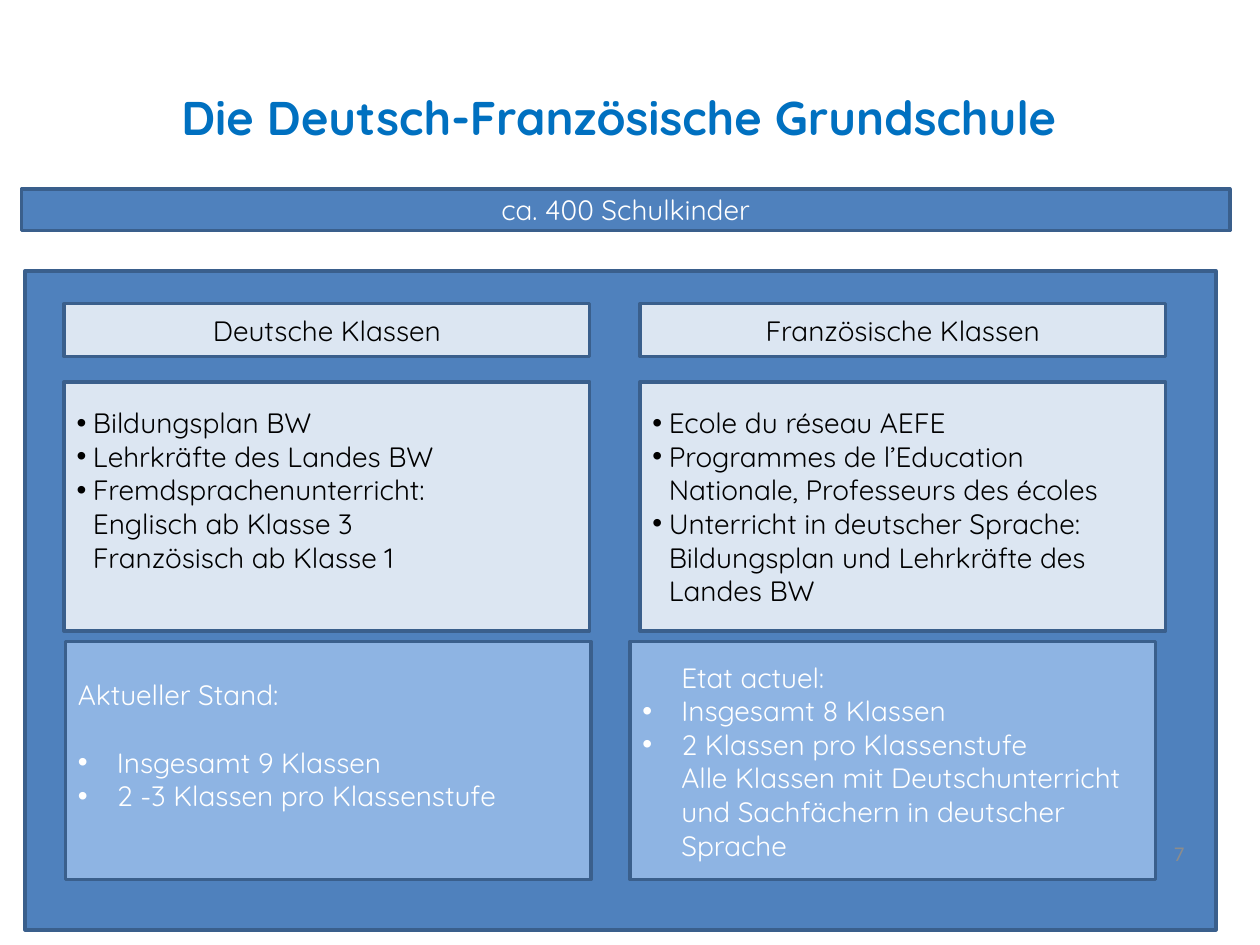
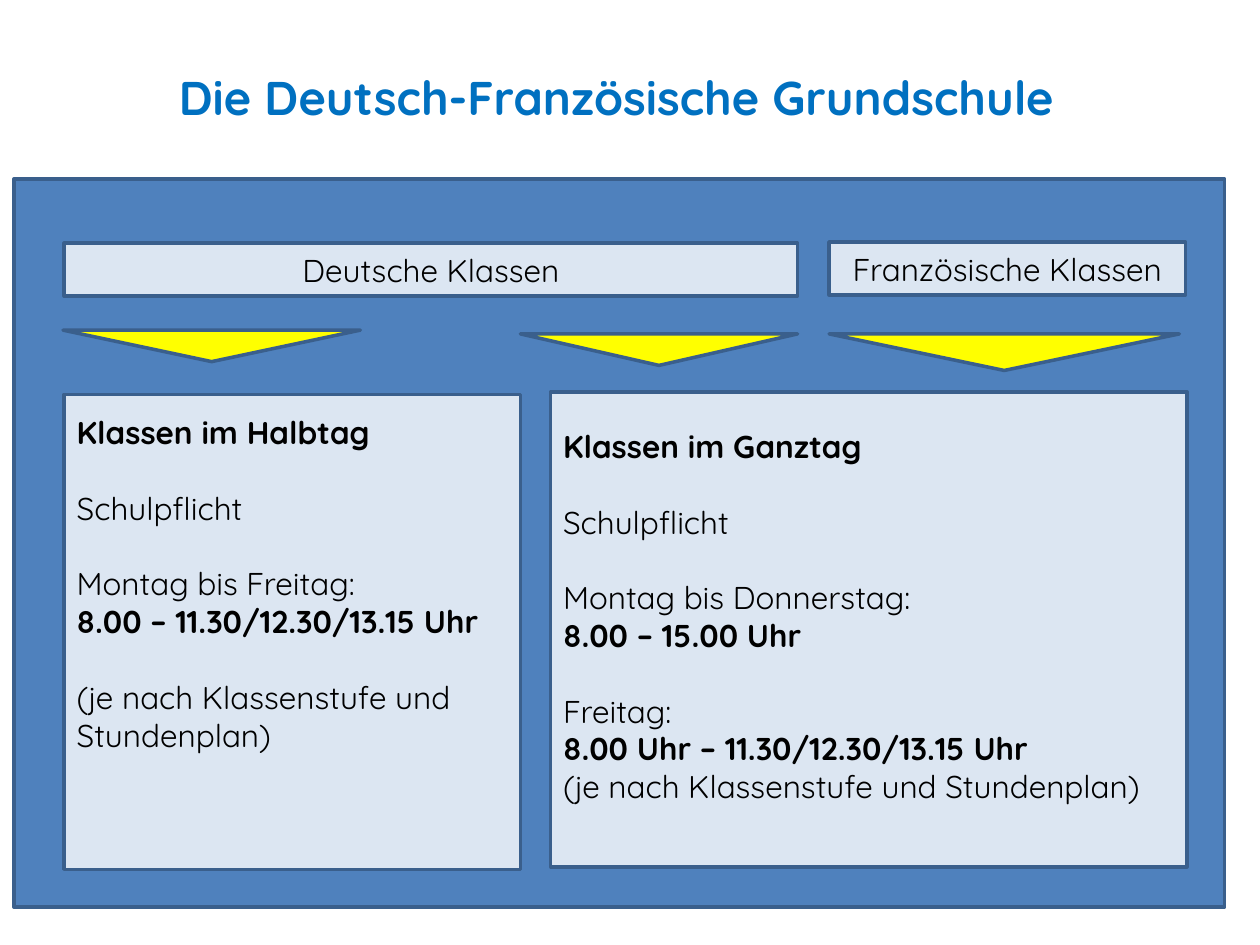
import dataclasses
import typing

import lxml.etree
import pptx
import pptx.dml.color
import pptx.enum.shapes
import pptx.enum.text
import pptx.oxml.ns
import pptx.util

RGBColor = pptx.dml.color.RGBColor
Preset = pptx.enum.shapes.MSO_SHAPE
Align = pptx.enum.text.PP_ALIGN
Anchor = pptx.enum.text.MSO_ANCHOR

# Shared colours, fonts and grid
BLUE = RGBColor(0x4F, 0x81, 0xBD)
MID_BLUE = RGBColor(0x8E, 0xB4, 0xE3)
PALE_BLUE = RGBColor(0xDC, 0xE6, 0xF2)
OUTLINE = RGBColor(0x3A, 0x5F, 0x8C)
TITLE_BLUE = RGBColor(0x00, 0x70, 0xC0)
YELLOW = RGBColor(0xFF, 0xFF, 0x00)
GREY = RGBColor(0x8C, 0x8C, 0x8C)
BLACK = RGBColor(0, 0, 0)
WHITE = RGBColor(0xFF, 0xFF, 0xFF)

FONT = "Quicksand"
NUMBER_FONT = "Calibri"
TITLE = "Die Deutsch-Französische Grundschule"
GERMAN = "Deutsche Klassen"
FRENCH = "Französische Klassen"

WIDTH, HEIGHT = pptx.util.Inches(10), pptx.util.Inches(7.5)
COLUMNS, ROWS = 100, 75
LINE_HEIGHT = 1.2


@dataclasses.dataclass(frozen=True)
class Area:
    """A place on the grid, in columns and rows."""
    left: float
    top: float
    width: float
    height: float

    def emu(self) -> tuple[int, ...]:
        column, row = WIDTH / COLUMNS, HEIGHT / ROWS
        return (round(self.left * column), round(self.top * row),
                round(self.width * column), round(self.height * row))


@dataclasses.dataclass(frozen=True)
class Line:
    """One paragraph; gap counts the empty lines above it."""
    text: str
    bullet: bool = False
    indent: float = 0
    bold: bool = False
    gap: int = 0


@dataclasses.dataclass(frozen=True)
class Style:
    size: float
    color: RGBColor = BLACK
    align: Align = Align.LEFT
    font: str = FONT


@dataclasses.dataclass(frozen=True)
class Panel:
    """A filled box; inset is the top margin in rows, None centres the text."""
    area: Area
    fill: RGBColor = PALE_BLUE
    lines: tuple[Line, ...] = ()
    style: Style = Style(16)
    inset: typing.Optional[float] = None
    preset: Preset = Preset.RECTANGLE
    rotation: float = 0


def set_bullet(para, indent: float, bullet: bool) -> None:
    properties = para._p.get_or_add_pPr()
    margin = WIDTH * indent / COLUMNS
    properties.set("marL", str(round(margin)))
    properties.set("indent", str(round(-margin if bullet else 0)))
    if bullet:
        for tag, values in {"a:buFont": {"typeface": "Arial"},
                            "a:buChar": {"char": "•"}}.items():
            lxml.etree.SubElement(properties, pptx.oxml.ns.qn(tag), values)


def write(box, lines: typing.Sequence[Line], style: Style,
          inset: typing.Optional[float] = None) -> None:
    frame = box.text_frame
    frame.word_wrap = True
    frame.vertical_anchor = Anchor.MIDDLE if inset is None else Anchor.TOP
    if inset is not None:
        frame.margin_top = round(HEIGHT * inset / ROWS)
    for number, line in enumerate(lines):
        para = frame.add_paragraph() if number else frame.paragraphs[0]
        para.alignment = style.align
        para.space_before = pptx.util.Pt(line.gap * style.size * LINE_HEIGHT)
        set_bullet(para, line.indent, line.bullet)
        span = para.add_run()
        span.text = line.text
        formats = {"name": style.font, "size": pptx.util.Pt(style.size), "bold": line.bold}
        for name, value in formats.items():
            setattr(span.font, name, value)
        span.font.color.rgb = style.color


def draw_panel(page, panel: Panel) -> None:
    box = page.shapes.add_shape(panel.preset, *panel.area.emu())
    box.shadow.inherit = False
    box.rotation = panel.rotation
    box.fill.solid()
    box.fill.fore_color.rgb = panel.fill
    box.line.color.rgb = OUTLINE
    box.line.width = pptx.util.Pt(2)
    if panel.lines:
        write(box, panel.lines, panel.style, panel.inset)


def draw_label(page, area: Area, text: str, style: Style, bold: bool = False) -> None:
    write(page.shapes.add_textbox(*area.emu()), [Line(text, bold=bold)], style)


def heading(area: Area, text: str, size: float) -> Panel:
    return Panel(area, lines=(Line(text),), style=Style(size, align=Align.CENTER))


def arrow(left: float, top: float, width: float, height: float) -> Panel:
    return Panel(Area(left, top, width, height), YELLOW,
                 preset=Preset.ISOSCELES_TRIANGLE, rotation=180)


def add_page(deck, title_area: Area, panels: typing.Sequence[Panel]):
    page = deck.slides.add_slide(deck.slide_layouts[6])
    for panel in panels:
        draw_panel(page, panel)
    draw_label(page, title_area, TITLE, Style(27, TITLE_BLUE, Align.CENTER), bold=True)
    return page


# Slide 1: the two kinds of classes side by side
LIST, STATE = 1.3, 3.1
CLASS_WIDTH = 41.7
GERMAN_LEFT, FRENCH_LEFT = 5.1, 50.8
CLASS_LISTS = {
    (GERMAN_LEFT, GERMAN): (
        Line("Bildungsplan BW", True, LIST),
        Line("Lehrkräfte des Landes BW", True, LIST),
        Line("Fremdsprachenunterricht:", True, LIST),
        Line("Englisch ab Klasse 3", indent=LIST),
        Line("Französisch ab Klasse 1", indent=LIST)),
    (FRENCH_LEFT, FRENCH): (
        Line("Ecole du réseau AEFE", True, LIST),
        Line("Programmes de l’Education", True, LIST),
        Line("Nationale, Professeurs des écoles", indent=LIST),
        Line("Unterricht in deutscher Sprache:", True, LIST),
        Line("Bildungsplan und Lehrkräfte des", indent=LIST),
        Line("Landes BW", indent=LIST)),
}
GERMAN_STATE = (
    Line("Aktueller Stand:"),
    Line("Insgesamt 9 Klassen", True, STATE, gap=1),
    Line("2 -3 Klassen pro Klassenstufe", True, STATE))
FRENCH_STATE = (
    Line("Etat actuel:", indent=STATE),
    Line("Insgesamt 8 Klassen", True, STATE),
    Line("2 Klassen pro Klassenstufe", True, STATE),
    Line("Alle Klassen mit Deutschunterricht und Sachfächern in deutscher Sprache",
         indent=STATE))


def add_classes_page(deck) -> None:
    panels = [
        Panel(Area(2, 21.5, 94.5, 52.3), BLUE),
        Panel(Area(1.7, 15, 95.9, 3.3), BLUE, (Line("ca. 400 Schulkinder"),),
              Style(16, WHITE, Align.CENTER)),
    ]
    for left, lines, inset in ((5.2, GERMAN_STATE, 2.9), (50, FRENCH_STATE, 1.5)):
        panels.append(Panel(Area(left, 50.9, CLASS_WIDTH, 18.9), MID_BLUE, lines,
                            Style(16, WHITE), inset))
    for (left, name), lines in CLASS_LISTS.items():
        panels.append(heading(Area(left, 24.1, CLASS_WIDTH, 4.2), name, 16))
        panels.append(Panel(Area(left, 30.3, CLASS_WIDTH, 19.8), lines=lines, inset=1.9))
    page = add_page(deck, Area(1.2, 3, 95.8, 12.5), panels)
    draw_label(page, Area(71.7, 65.7, 23.3, 4), "7",
               Style(12, GREY, Align.RIGHT, NUMBER_FONT))


# Slide 2: school hours of half-day and full-day classes
HALF_DAY = (
    Line("Klassen im Halbtag", bold=True),
    Line("Schulpflicht", gap=1),
    Line("Montag bis Freitag:", gap=1),
    Line("8.00 – 11.30/12.30/13.15 Uhr", bold=True),
    Line("(je nach Klassenstufe und Stundenplan)", gap=1))
FULL_DAY = (
    Line("Klassen im Ganztag", bold=True),
    Line("Schulpflicht", gap=1),
    Line("Montag bis Donnerstag:", gap=1),
    Line("8.00 – 15.00 Uhr", bold=True),
    Line("Freitag:", gap=1),
    Line("8.00 Uhr – 11.30/12.30/13.15 Uhr", bold=True),
    Line("(je nach Klassenstufe und Stundenplan)"))


def add_hours_page(deck) -> None:
    add_page(deck, Area(-0.5, 3, 98.8, 9.4), [
        Panel(Area(1.1, 14.2, 96.1, 57.8), BLUE),
        heading(Area(5.1, 19.3, 58.2, 4.2), GERMAN, 18),
        heading(Area(65.8, 19.2, 28.3, 4.2), FRENCH, 18),
        Panel(Area(5.1, 31.3, 36.2, 37.7), lines=HALF_DAY, style=Style(18), inset=1.5),
        Panel(Area(43.7, 31.1, 50.5, 37.7), lines=FULL_DAY, style=Style(18), inset=2.8),
        arrow(65.8, 26.5, 27.8, 2.9),
        arrow(5, 26.2, 23.6, 2.5),
        arrow(41.3, 26.5, 22, 2.5),
    ])


def main() -> None:
    deck = pptx.Presentation()
    deck.slide_width, deck.slide_height = WIDTH, HEIGHT
    add_classes_page(deck)
    add_hours_page(deck)
    deck.save("out.pptx")


if __name__ == "__main__":
    main()
